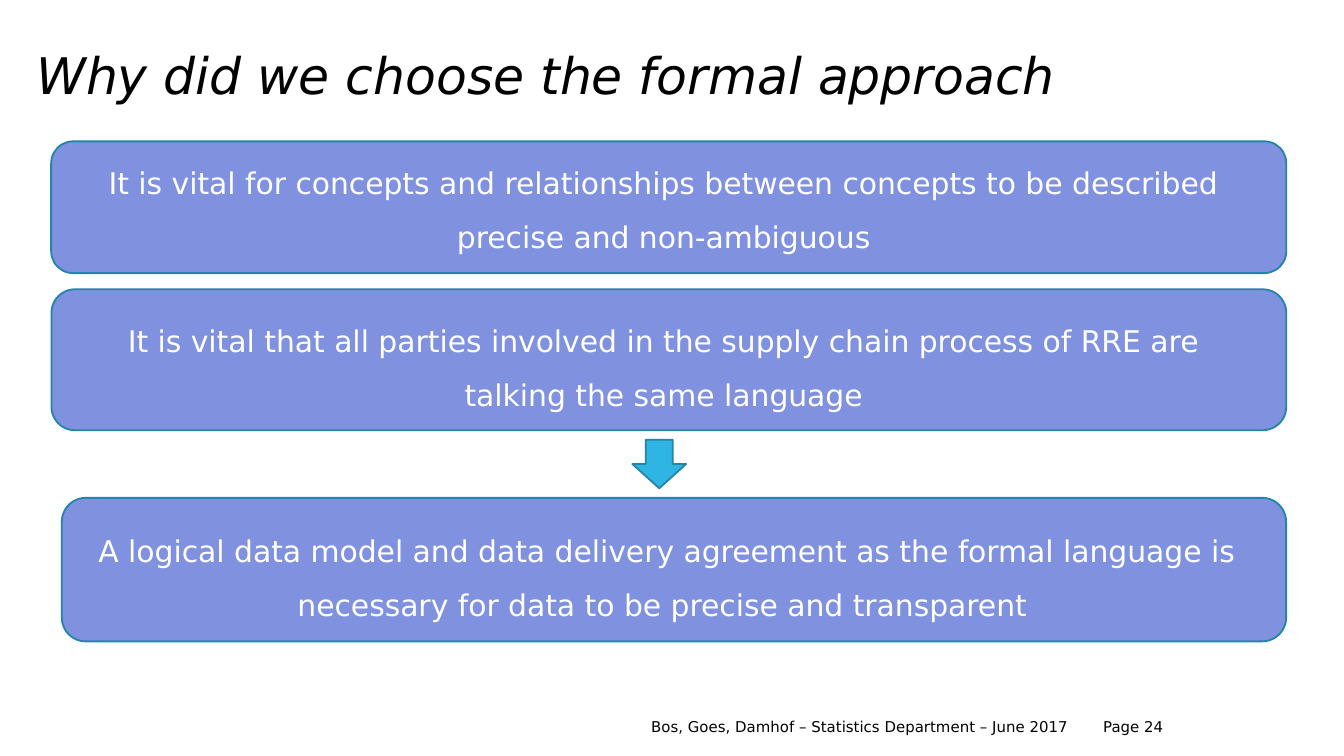
"""Build the slide on why the formal approach was chosen."""
from pptx import Presentation
from pptx.dml.color import RGBColor
from pptx.enum.shapes import MSO_SHAPE
from pptx.enum.text import MSO_ANCHOR, PP_ALIGN
from pptx.util import Pt

ROUND_RECT, DOWN_ARROW = MSO_SHAPE.ROUNDED_RECTANGLE, MSO_SHAPE.DOWN_ARROW
LEFT, CENTER, RIGHT = PP_ALIGN.LEFT, PP_ALIGN.CENTER, PP_ALIGN.RIGHT
TOP = MSO_ANCHOR.TOP

FONT = "DejaVu Sans"
BLACK = RGBColor(0x00, 0x00, 0x00)
WHITE = RGBColor(0xFF, 0xFF, 0xFF)
PERIWINKLE = RGBColor(0x7F, 0x91, 0xDF)
SKY = RGBColor(0x2F, 0xB5, 0xE4)
TEAL = RGBColor(0x23, 0x86, 0xA9)

TITLE = "Why did we choose the formal approach"
STATEMENTS = [
    ("It is vital for concepts and relationships between concepts to be described "
     "precise and non-ambiguous", (27.4, 75.7, 661.7, 70.6), (33.1, 75, 645.1, 61.2)),
    ("It is vital that all parties involved in the supply chain process of RRE are "
     "talking the same language", (27.6, 155, 661.5, 75.5), (33.1, 159.8, 645.1, 65.5)),
    ("A logical data model and data delivery agreement as the formal language is "
     "necessary for data to be precise and transparent ",
     (33.1, 266.7, 655.9, 76.9), (36.7, 272.2, 641.5, 61.2)),
]
ARROW = (338.8, 235.6, 28.8, 26)
FOOTER = [
    ("Bos, Goes, Damhof – Statistics Department – June 2017", (224.6, 380.9, 355, 13.7), RIGHT),
    ("Page 24", (583.9, 380.9, 54, 13.7), LEFT),
]


def add_shape(s, kind, box, fill):
    sp = s.shapes.add_shape(kind, *map(Pt, box))
    sp.shadow.inherit = False
    sp.fill.solid()
    sp.fill.fore_color.rgb = fill
    sp.line.color.rgb = TEAL
    sp.line.width = Pt(1)


def add_text(s, text, box, size, color, align=LEFT, spacing=None, italic=False):
    tf = s.shapes.add_textbox(*map(Pt, box)).text_frame
    tf.word_wrap = True
    tf.vertical_anchor = TOP
    tf.text = text
    p = tf.paragraphs[0]
    p.alignment = align
    p.line_spacing = spacing
    font = p.runs[0].font
    font.name, font.size, font.italic = FONT, Pt(size), italic
    font.color.rgb = color
    return tf


def main():
    prs = Presentation()
    prs.slide_width, prs.slide_height = Pt(720), Pt(405)
    s = prs.slides.add_slide(prs.slide_layouts[6])

    tf = add_text(s, TITLE, (19.4, 18.7, 658, 57.6), 27, BLACK, spacing=Pt(37.5), italic=True)
    tf.margin_left = tf.margin_top = tf.margin_right = tf.margin_bottom = 0

    for text, panel, text_box in STATEMENTS:
        add_shape(s, ROUND_RECT, panel, PERIWINKLE)
        add_text(s, text, text_box, 16, WHITE, CENTER, 1.5)
    add_shape(s, DOWN_ARROW, ARROW, SKY)

    for text, box, align in FOOTER:
        add_text(s, text, box, 8, BLACK, align)
    prs.save("out.pptx")


if __name__ == "__main__":
    main()
